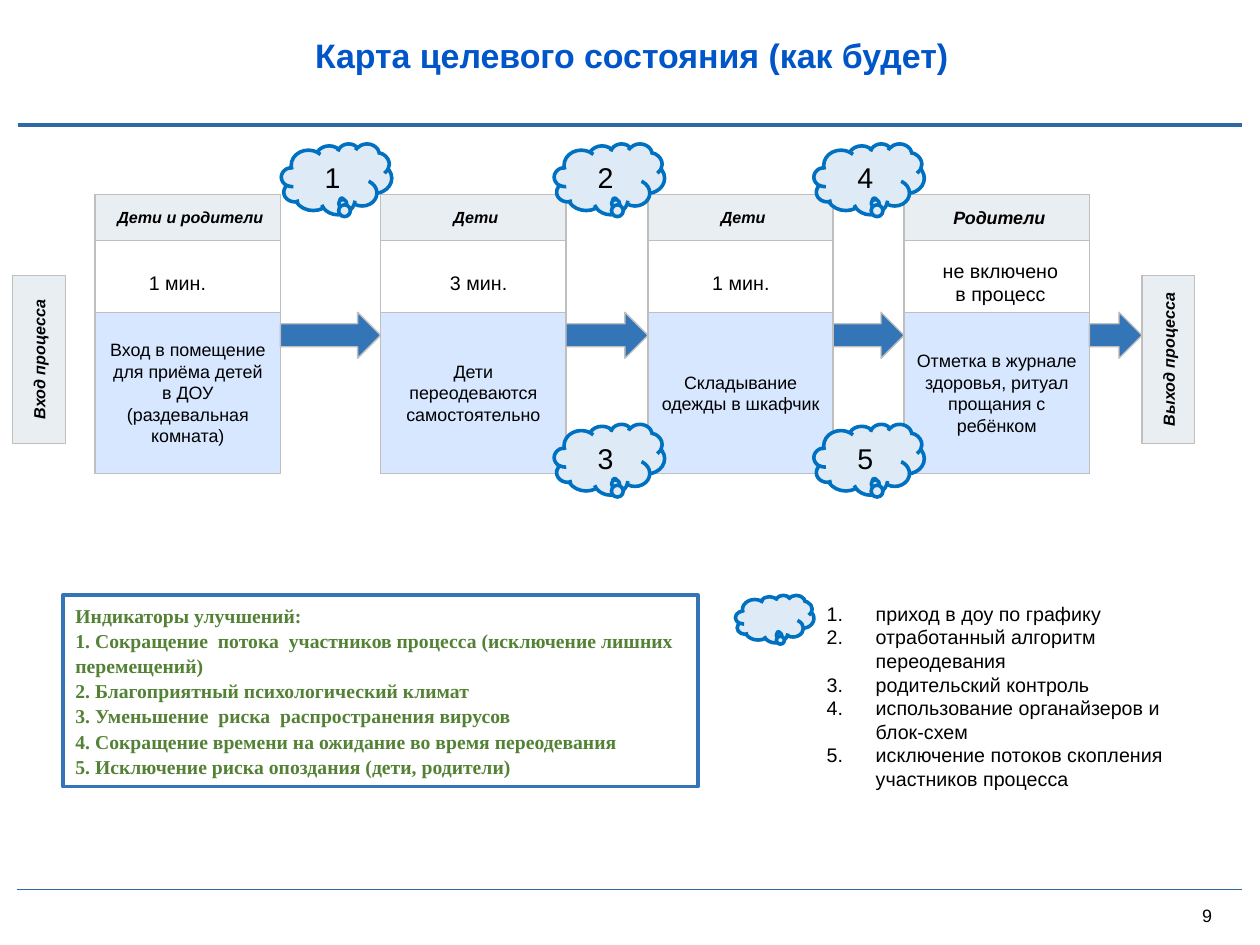
"""Builds the target state map slide of a morning arrival process."""
from dataclasses import dataclass

from pptx import Presentation
from pptx.dml.color import RGBColor as RGB
from pptx.enum.shapes import MSO_CONNECTOR as CONN, MSO_SHAPE as SHAPE
from pptx.enum.text import MSO_ANCHOR as ANCHOR, PP_ALIGN as ALIGN
from pptx.oxml.ns import qn
from pptx.util import Cm, Pt


@dataclass(frozen=True)
class Theme:
    sans: str = "Arial"
    serif: str = "Times New Roman"
    black: str = "000000"
    white: str = "FFFFFF"
    title: str = "0055C8"
    rule: str = "2E69A5"
    accent: str = "3375B7"
    green: str = "538135"
    border: str = "BFBFBF"
    header: str = "E9EEF3"
    action: str = "D6E7FF"
    cloud: str = "DEEAF6"
    cloud_line: str = "0070C0"
    title_pt: int = 19
    number_pt: int = 16
    text_pt: int = 11
    small_pt: int = 10
    label_pt: int = 9
    thin_pt: float = 0.75
    thick_pt: float = 2
    title_rule_pt: float = 2.25


T = Theme()
INSETS = (0.25, 0.13, 0.25, 0.13)
TIGHT = (0.1, 0.1, 0.1, 0.1)
HEADER_INSETS = (0.2, 0.1, 0.1, 0.1)
COL_W, COL_TOP, COL_H = 3.66, 3.84, 5.51
HEADER_H, ACTION_TOP, ACTION_H = 0.91, 6.17, 3.18
CLOUD_W, CLOUD_H = 2.18, 1.4
CLOUD_TOP, CLOUD_LOW = 2.84, 8.38
GATE_TOP, GATE_W, GATE_H = 5.44, 1.04, 3.33
EXIT_X = 22.56

STEPS = [
    (1.88, "Дети и родители", T.label_pt, "Вход в помещение для приёма детей в ДОУ (раздевальная комната)"),
    (7.52, "Дети", T.label_pt, "Дети переодеваются самостоятельно"),
    (12.8, "Дети", T.label_pt, "Складывание одежды в шкафчик"),
    (17.86, "Родители", T.small_pt, "Отметка в журнале здоровья, ритуал прощания с ребёнком"),
]
TIMES = [(2.69, "1 мин."), (8.64, "3 мин."), (13.82, "1 мин.")]
GATES = [(0.25, "Вход процесса"), (EXIT_X, "Выход процесса")]
CLOUDS = [
    ("1", 5.56, CLOUD_TOP),
    ("2", 10.95, CLOUD_TOP),
    ("3", 10.95, CLOUD_LOW),
    ("4", 16.08, CLOUD_TOP),
    ("5", 16.08, CLOUD_LOW),
]
INDICATORS = [
    "Индикаторы улучшений:",
    "1. Сокращение  потока  участников процесса (исключение лишних перемещений)",
    "2. Благоприятный психологический климат",
    "3. Уменьшение  риска  распространения вирусов",
    "4. Сокращение времени на ожидание во время переодевания",
    "5. Исключение риска опоздания (дети, родители)",
]
IMPROVEMENTS = [
    "приход в доу по графику",
    "отработанный алгоритм переодевания",
    "родительский контроль",
    "использование органайзеров и блок-схем",
    "исключение потоков скопления участников процесса",
]


def set_all(obj, values):
    for name, value in values.items():
        setattr(obj, name, value)


def number_paragraph(p, indent=0.97):
    ppr = p._p.get_or_add_pPr()
    ppr.set("marL", str(Cm(indent)))
    ppr.set("indent", str(-Cm(indent)))
    ppr.makeelement(qn("a:buAutoNum"), {"type": "arabicPeriod"})
    ppr.append(ppr.makeelement(qn("a:buAutoNum"), {"type": "arabicPeriod"}))


def write(sp, lines, size, color=T.black, font=T.sans, bold=False, italic=False,
          align=ALIGN.CENTER, anchor=ANCHOR.MIDDLE, insets=INSETS, wrap=True,
          spacing=None, numbered=False):
    tf = sp.text_frame
    sides = ("margin_left", "margin_top", "margin_right", "margin_bottom")
    set_all(tf, dict(zip(sides, map(Cm, insets)), word_wrap=wrap, vertical_anchor=anchor))
    for i, line in enumerate(lines):
        p = tf.paragraphs[0] if i == 0 else tf.add_paragraph()
        set_all(p, {"alignment": align, "line_spacing": spacing})
        if numbered:
            number_paragraph(p)
        r = p.add_run()
        r.text = line
        set_all(r.font, {"name": font, "size": Pt(size), "bold": bold, "italic": italic})
        r.font.color.rgb = RGB.from_string(color)


def add_box(s, x, y, w, h, fill, line=T.border, width=T.thin_pt, kind=SHAPE.RECTANGLE):
    sp = s.shapes.add_shape(kind, Cm(x), Cm(y), Cm(w), Cm(h))
    sp.shadow.inherit = False
    sp.fill.solid()
    sp.fill.fore_color.rgb = RGB.from_string(fill)
    sp.line.color.rgb = RGB.from_string(line)
    sp.line.width = Pt(width)
    return sp


def add_text(s, x, y, w, h, lines, size, **fmt):
    sp = s.shapes.add_textbox(Cm(x), Cm(y), Cm(w), Cm(h))
    write(sp, lines, size, **{"anchor": ANCHOR.TOP, "align": ALIGN.LEFT, **fmt})


def add_rule(s, x, y, right, width):
    line = s.shapes.add_connector(CONN.STRAIGHT, Cm(x), Cm(y), Cm(right), Cm(y))
    line.line.color.rgb = RGB.from_string(T.rule)
    line.line.width = Pt(width)
    sp_pr = line._element.spPr
    sp_pr.append(sp_pr.makeelement(qn("a:effectLst"), {}))


def add_step(s, x, who, who_pt, action):
    add_box(s, x, COL_TOP, COL_W, COL_H, T.white)
    body = add_box(s, x, ACTION_TOP, COL_W, ACTION_H, T.action)
    write(body, [action], T.small_pt)
    header = add_box(s, x, COL_TOP, COL_W, HEADER_H, T.header)
    write(header, [who], who_pt, bold=True, italic=True, insets=HEADER_INSETS)


def add_gate(s, x, label):
    gate = add_box(s, x, GATE_TOP, GATE_W, GATE_H, T.header)
    write(gate, [label], T.label_pt, bold=True, italic=True, insets=TIGHT)
    gate.text_frame._txBody.bodyPr.set("vert", "vert270")


def add_cloud(s, x, y, w=CLOUD_W, h=CLOUD_H, number=None):
    cloud = add_box(s, x, y, w, h, T.cloud, T.cloud_line, T.thick_pt, SHAPE.CLOUD_CALLOUT)
    cloud.adjustments[0], cloud.adjustments[1] = 0.048, 0.297
    if number:
        write(cloud, [number], T.number_pt, wrap=False)


def add_process(s):
    for step in STEPS:
        add_step(s, *step)
    lefts = [step[0] for step in STEPS]
    for x, target in zip(lefts, lefts[1:] + [EXIT_X]):
        start = x + COL_W
        add_box(s, start, ACTION_TOP, target - start, HEADER_H, T.accent, kind=SHAPE.RIGHT_ARROW)
    for x, time in TIMES:
        add_text(s, x, 5.23, 1.78, 0.74, [time], T.text_pt)
    add_text(s, 17.95, 4.98, 3.63, 1.19, ["не включено", "в процесс"], T.text_pt,
             align=ALIGN.CENTER)
    for x, label in GATES:
        add_gate(s, x, label)
    for number, x, y in CLOUDS:
        add_cloud(s, x, y, number=number)


def add_results(s):
    panel = add_box(s, 1.24, 11.76, 12.55, 3.78, T.white, T.accent, T.thick_pt)
    write(panel, INDICATORS, T.text_pt, T.green, T.serif, bold=True,
          align=ALIGN.LEFT, anchor=ANCHOR.TOP, spacing=1.07)
    add_cloud(s, 14.53, 11.76, 1.55, 0.94)
    add_text(s, 16.08, 11.76, 7.54, 4.1, IMPROVEMENTS, T.text_pt, numbered=True)


def main():
    prs = Presentation()
    set_all(prs, {"slide_width": Cm(24.89), "slide_height": Cm(18.67)})
    s = prs.slides.add_slide(prs.slide_layouts[6])
    add_rule(s, 0.35, 2.46, 24.54, T.title_rule_pt)
    add_rule(s, 0.33, 17.58, 24.54, T.thin_pt)
    add_text(s, 4.01, 0.56, 16.94, 1.07, ["Карта целевого состояния (как будет)"],
             T.title_pt, color=T.title, bold=True, align=ALIGN.CENTER)
    add_process(s)
    add_results(s)
    add_text(s, 23.75, 17.88, 0.58, 0.43, ["9"], T.small_pt, insets=(0, 0, 0, 0), wrap=False)
    prs.save("out.pptx")


if __name__ == "__main__":
    main()
